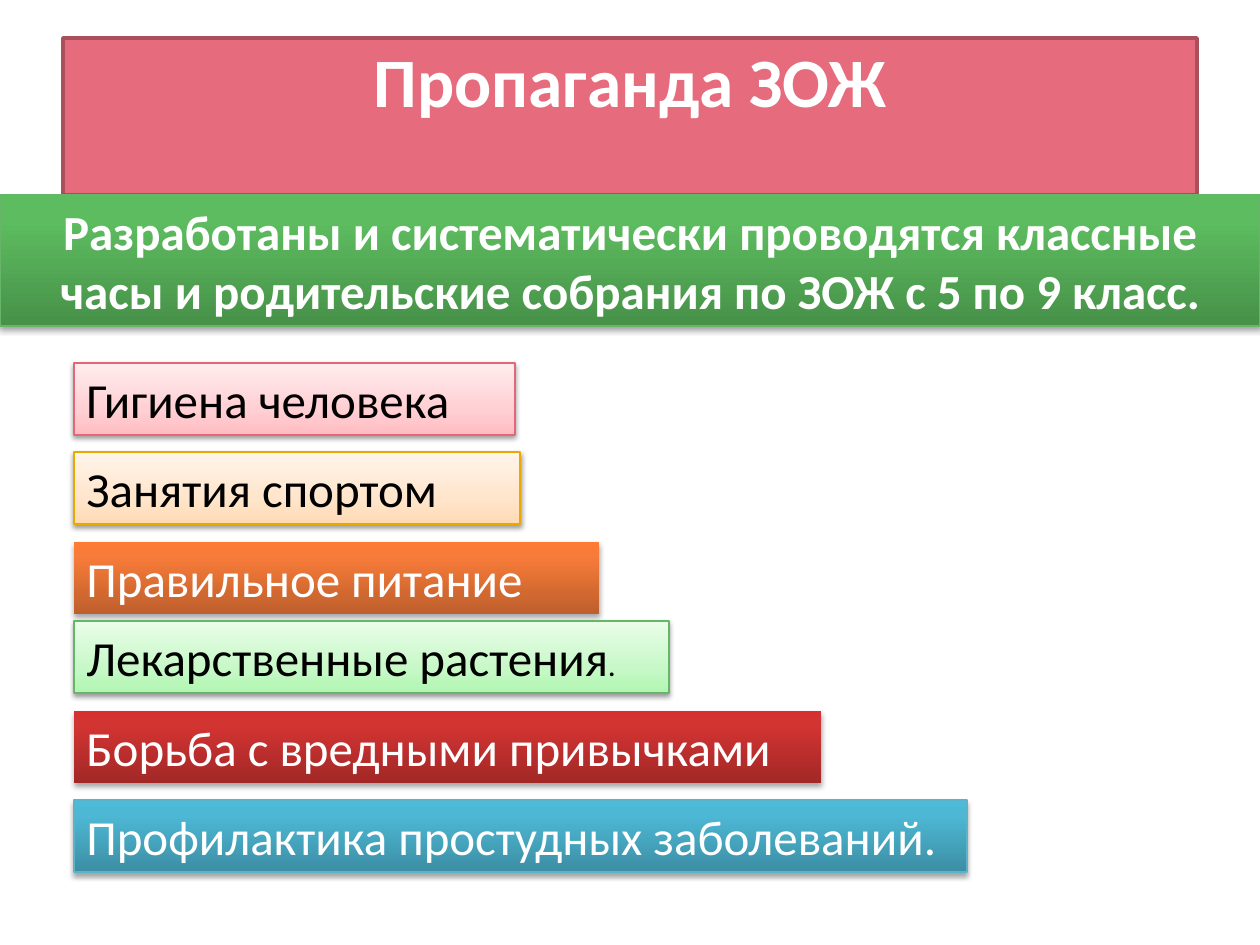
from dataclasses import dataclass

from lxml.etree import SubElement
from pptx import Presentation
from pptx.dml.color import RGBColor as RGB
from pptx.enum.shapes import MSO_SHAPE as Preset
from pptx.enum.text import MSO_ANCHOR as Anchor, MSO_AUTO_SIZE as AutoSize, PP_ALIGN as Align
from pptx.oxml.ns import qn
from pptx.util import Emu, Pt

EMU_PER_PX = 914400 / 126


@dataclass(frozen=True)
class Theme:
    font: str = "Calibri"
    title_size: float = 39.6
    body_size: int = 28
    small_size: int = 18
    light: str = "FFFFFF"
    dark: str = "000000"
    title_fill: str = "E66C7D"
    title_line: str = "AA505C"
    # Gradient colours run from the bottom edge to the top edge
    pink: tuple = ("FFBCC2", "FFCFD3", "FFEDEE")
    peach: tuple = ("FFDBB5", "FFE5CB", "FFF5EB")
    orange: tuple = ("BE5F2C", "F77B39", "FC7B35")
    mint: tuple = ("B0F6B1", "C8F8C8", "E9FDE9")
    red: tuple = ("A22827", "D23432", "D6312F")
    blue: tuple = ("3C8EA4", "4DB8D5", "4BBBD9")
    green: tuple = ("479149", "5DBC5F", "5BBF5E")
    pink_line: str = "E46778"
    peach_line: str = "EBA900"
    green_line: str = "67B569"
    blue_line: str = "5BB3CA"


theme = Theme()


def px(*lengths):
    return [Emu(round(length * EMU_PER_PX)) for length in lengths]


def write(paragraph, text, size=theme.body_size, color=theme.light, bold=False, align=Align.LEFT):
    paragraph.alignment = align
    run = paragraph.add_run()
    run.text = text
    run.font.name = theme.font
    run.font.size = Pt(size)
    run.font.bold = bold
    run.font.color.rgb = RGB.from_string(color)


prs = Presentation()
prs.slide_width, prs.slide_height = px(1260, 945)
slide = prs.slides.add_slide(prs.slide_layouts[5])

title = slide.shapes.title
title.left, title.top, title.width, title.height = px(63, 38, 1134, 157)
title.fill.solid()
title.fill.fore_color.rgb = RGB.from_string(theme.title_fill)
title.line.color.rgb = RGB.from_string(theme.title_line)
title.line.width = Pt(2)
title.text_frame.auto_size = AutoSize.NONE
title.text_frame.vertical_anchor = Anchor.TOP
title.text_frame.margin_top = 0
write(title.text_frame.paragraphs[0], "Пропаганда ЗОЖ",
      size=theme.title_size, bold=True, align=Align.CENTER)

banner_text = ("Разработаны и систематически проводятся классные часы "
               "и родительские собрания по ЗОЖ с 5 по 9 класс.")

# left, top, width, height, gradient, outline, pale look, text
bars = [
    (0, 195, 1260, 131, theme.green, theme.green_line, False, banner_text),
    (74, 363, 441, 72, theme.pink, theme.pink_line, True, "Гигиена человека"),
    (74, 452, 446, 72, theme.peach, theme.peach_line, True, "Занятия спортом"),
    (74, 542, 525, 72, theme.orange, None, False, "Правильное питание"),
    (74, 621, 595, 72, theme.mint, theme.green_line, True, "Лекарственные растения"),
    (74, 711, 747, 72, theme.red, None, False, "Борьба с вредными привычками"),
    (74, 800, 893, 72, theme.blue, theme.blue_line, False, "Профилактика простудных заболеваний."),
]

for left, top, width, height, gradient, outline, pale, text in bars:
    bar = slide.shapes.add_shape(Preset.RECTANGLE, *px(left, top, width, height))

    bar.fill.gradient()
    bar.fill.gradient_angle = 90
    stops = bar._element.spPr.find(".//" + qn("a:gsLst"))
    for stop in list(stops):
        stops.remove(stop)
    for position, color in zip((0, 35 if pale else 80, 100), gradient):
        stop = SubElement(stops, qn("a:gs"), pos=str(position * 1000))
        SubElement(stop, qn("a:srgbClr"), val=color)

    if outline:
        bar.line.color.rgb = RGB.from_string(outline)
        bar.line.width = Pt(0.75)
    else:
        bar.line.fill.background()

    bar.shadow.inherit = False
    effects = bar._element.spPr.find(qn("a:effectLst"))
    shadow = SubElement(effects, qn("a:outerShdw"), blurRad=str(Pt(3.1)),
                        dist=str(Pt(1.6 if pale else 1.8)), dir="5400000", rotWithShape="0")
    shadow_color = SubElement(shadow, qn("a:srgbClr"), val=theme.dark)
    SubElement(shadow_color, qn("a:alpha"), val="38000" if pale else "35000")

    frame = bar.text_frame
    frame.word_wrap = True
    frame.auto_size = AutoSize.SHAPE_TO_FIT_TEXT
    frame.vertical_anchor = Anchor.TOP
    is_banner = text == banner_text
    ink = theme.dark if pale else theme.light
    write(frame.paragraphs[0], text, color=ink, bold=is_banner,
          align=Align.CENTER if is_banner else Align.LEFT)
    if gradient == theme.mint:
        write(frame.paragraphs[0], ".", size=theme.small_size, color=ink)

prs.save("out.pptx")
